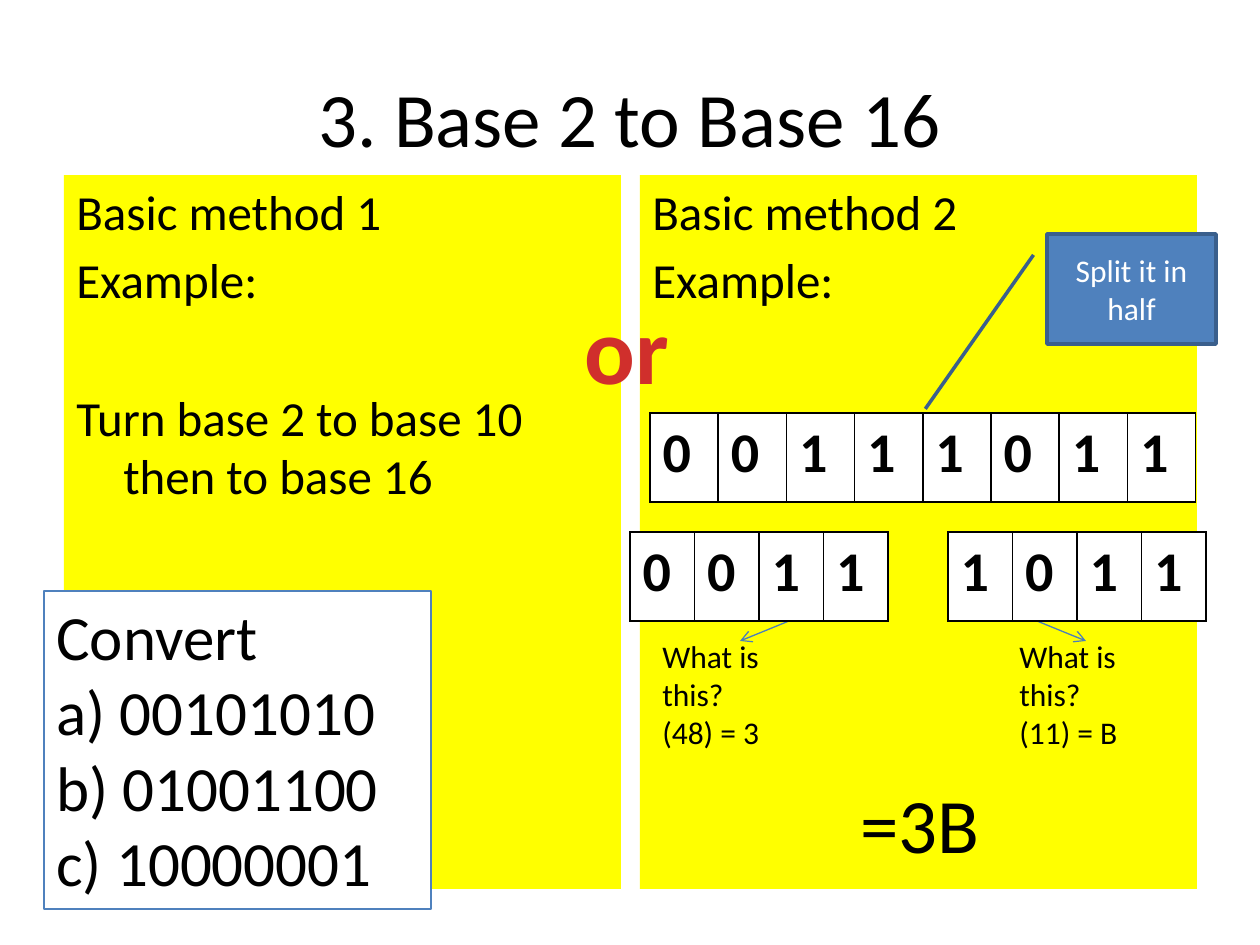
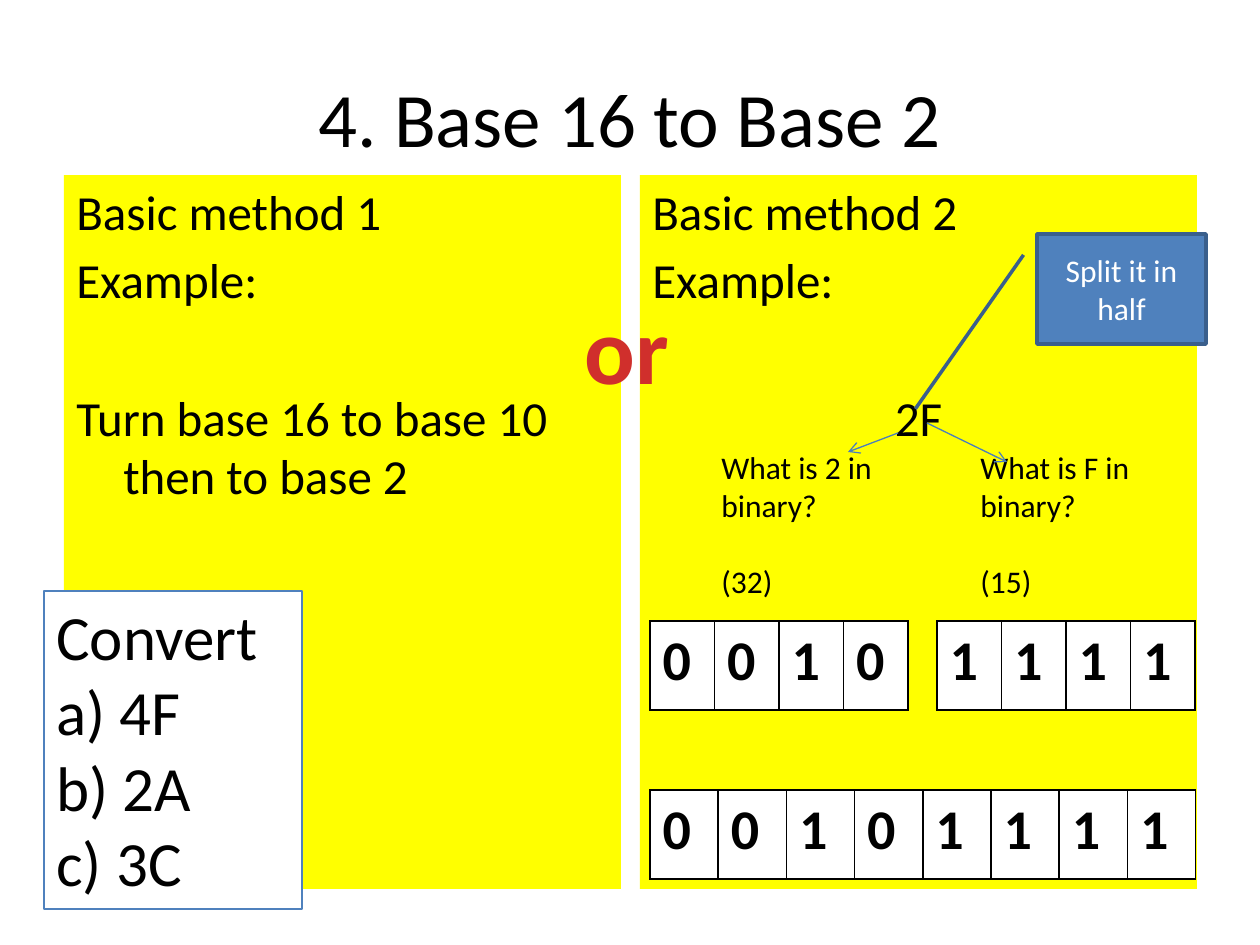
from lxml.etree import SubElement
from pptx import Presentation
from pptx.dml.color import RGBColor
from pptx.enum.shapes import MSO_CONNECTOR, MSO_SHAPE
from pptx.enum.text import MSO_ANCHOR, PP_ALIGN
from pptx.oxml.ns import qn
from pptx.util import Pt

EMU_PER_PX = 914400 / 126
FONT = "Calibri"
COLORS = {
    "text": "000000",
    "paper": "FFFFFF",
    "panel": "FFFF00",
    "or": "D02F2C",
    "callout": "4F81BD",
    "callout_line": "3A5F8C",
    "arrow": "4B7EBC",
}
PANEL_LINE = 33.6
PANEL_GAP = 5.6
NOTE_LINE = 22


def px(length):
    return round(length * EMU_PER_PX)


def color(name):
    return RGBColor.from_string(COLORS[name])


class Lesson:
    def __init__(self):
        self.deck = Presentation()
        self.deck.slide_width = px(1260)
        self.deck.slide_height = px(945)
        self.slide = None

    def fill_text(self, frame, lines, size, ink="text", align=PP_ALIGN.LEFT,
                  bold=False, anchor=MSO_ANCHOR.TOP, wrap=True):
        frame.text = "\n".join(lines)
        frame.word_wrap = wrap
        frame.vertical_anchor = anchor
        for paragraph in frame.paragraphs:
            paragraph.alignment = align
            for run in paragraph.runs:
                run.font.name = FONT
                run.font.size = Pt(size)
                run.font.bold = bold
                run.font.color.rgb = color(ink)
        return frame.paragraphs

    def text(self, area, lines, size, **style):
        label = self.slide.shapes.add_textbox(*map(px, area))
        return self.fill_text(label.text_frame, lines, size, **style)

    def shape(self, kind, area, fill, edge=None, weight=0.75):
        shape = self.slide.shapes.add_shape(kind, *map(px, area))
        shape.shadow.inherit = False
        shape.fill.solid()
        shape.fill.fore_color.rgb = color(fill)
        if edge:
            shape.line.color.rgb = color(edge)
            shape.line.width = Pt(weight)
        else:
            shape.line.fill.background()
        return shape

    def panel(self, left, lines):
        panel = self.shape(MSO_SHAPE.RECTANGLE, (left, 175, 557, 714), "panel")
        paragraphs = self.fill_text(panel.text_frame, lines, 28)
        for paragraph in paragraphs:
            paragraph.space_before = Pt(PANEL_GAP)
            indent = paragraph._p.get_or_add_pPr()
            indent.set("marL", str(px(47)))
            indent.set("indent", str(-px(47)))
        for conclusion in paragraphs[2:]:
            conclusion.space_before = Pt(PANEL_LINE + 2 * PANEL_GAP)
        return paragraphs

    def methods(self, title, first_step, second_example=()):
        self.slide = self.deck.slides.add_slide(self.deck.slide_layouts[6])
        self.text((63, 38, 1134, 157), [title], 44,
                  align=PP_ALIGN.CENTER, anchor=MSO_ANCHOR.MIDDLE)
        self.panel(64, ["Basic method 1", "Example:", first_step])
        second = self.panel(640, ["Basic method 2", "Example:", *second_example])
        for example in second[2:]:
            example.alignment = PP_ALIGN.CENTER
        self.text((571, 284, 111, 127), ["or"], 54, ink="or",
                  align=PP_ALIGN.CENTER, bold=True, wrap=False)

    def callout(self, left, label):
        callout = self.shape(MSO_SHAPE.LINE_CALLOUT_1, (left, 234, 169, 110),
                             "callout", "callout_line", 2)
        for index, value in enumerate((0.19, -0.08, 1.59, -0.72)):
            callout.adjustments[index] = value
        self.fill_text(callout.text_frame, [label], 18, ink="paper",
                       align=PP_ALIGN.CENTER, anchor=MSO_ANCHOR.MIDDLE)

    def note(self, left, top, height, lines, answer_gap=0, width=189):
        paragraphs = self.text((left, top, width, height), lines, 18)
        paragraphs[-1].space_before = Pt(answer_gap)

    def arrow(self, *ends):
        arrow = self.slide.shapes.add_connector(MSO_CONNECTOR.STRAIGHT, *map(px, ends))
        arrow.line.color.rgb = color("arrow")
        arrow.line.width = Pt(0.75)
        SubElement(arrow.line._get_or_add_ln(), qn("a:tailEnd"), type="arrow")
        SubElement(arrow._element.spPr, qn("a:effectLst"))

    def border(self, cell):
        properties = cell._tc.get_or_add_tcPr()
        for side in ("a:lnL", "a:lnR", "a:lnT", "a:lnB"):
            edge = SubElement(properties, qn(side), w=str(int(Pt(1))))
            paint = SubElement(edge, qn("a:solidFill"))
            SubElement(paint, qn("a:srgbClr"), val=COLORS["text"])

    def bits(self, left, top, width, digits):
        area = map(px, (left, top, width, 89))
        table = self.slide.shapes.add_table(1, len(digits), *area).table
        table.first_row = False
        table.horz_banding = False
        for column, digit in enumerate(digits):
            table.columns[column].width = px(width / len(digits))
            cell = table.cell(0, column)
            self.border(cell)
            cell.fill.solid()
            cell.fill.fore_color.rgb = color("paper")
            self.fill_text(cell.text_frame, [digit], 32, bold=True)

    def exercise(self, width, tasks):
        card = self.shape(MSO_SHAPE.RECTANGLE, (44, 591, width, 318), "paper", "callout")
        lines = [f"{letter}) {task}" for letter, task in zip("abc", tasks)]
        self.fill_text(card.text_frame, ["Convert", *lines], 36)


def binary_to_hex(lesson):
    lesson.methods("3. Base 2 to Base 16", "Turn base 2 to base 10 then to base 16")
    lesson.callout(1047, "Split it in half")
    for left, answer in ((650, "(48) = 3"), (1007, "(11) = B")):
        lesson.note(left, 631, 127, ["What is this?", answer], width=150)
    lesson.arrow(789, 621, 740, 641)
    lesson.arrow(1037, 621, 1086, 641)
    lesson.bits(630, 532, 258, "0011")
    lesson.bits(948, 532, 258, "1011")
    lesson.bits(650, 413, 546, "00111011")
    lesson.exercise(387, ["00101010", "01001100", "10000001"])
    lesson.text((848, 770, 208, 106), ["=3B"], 44)


def hex_to_binary(lesson):
    lesson.methods("4. Base 16 to Base 2", "Turn base 16 to base 10 then to base 2", ["2F"])
    lesson.callout(1037, "Split it in half")
    for left, digit, answer in ((709, "2", "(32)"), (968, "F", "(15)")):
        lesson.note(left, 442, 165, [f"What is {digit} in binary?", answer], NOTE_LINE)
    lesson.arrow(898, 433, 848, 452)
    lesson.arrow(927, 423, 1007, 462)
    lesson.bits(650, 621, 258, "0010")
    lesson.bits(937, 621, 258, "1111")
    lesson.bits(650, 790, 546, "00101111")
    lesson.exercise(258, ["4F", "2A", "3C"])


def main():
    lesson = Lesson()
    binary_to_hex(lesson)
    hex_to_binary(lesson)
    lesson.deck.save("out.pptx")


if __name__ == "__main__":
    main()
